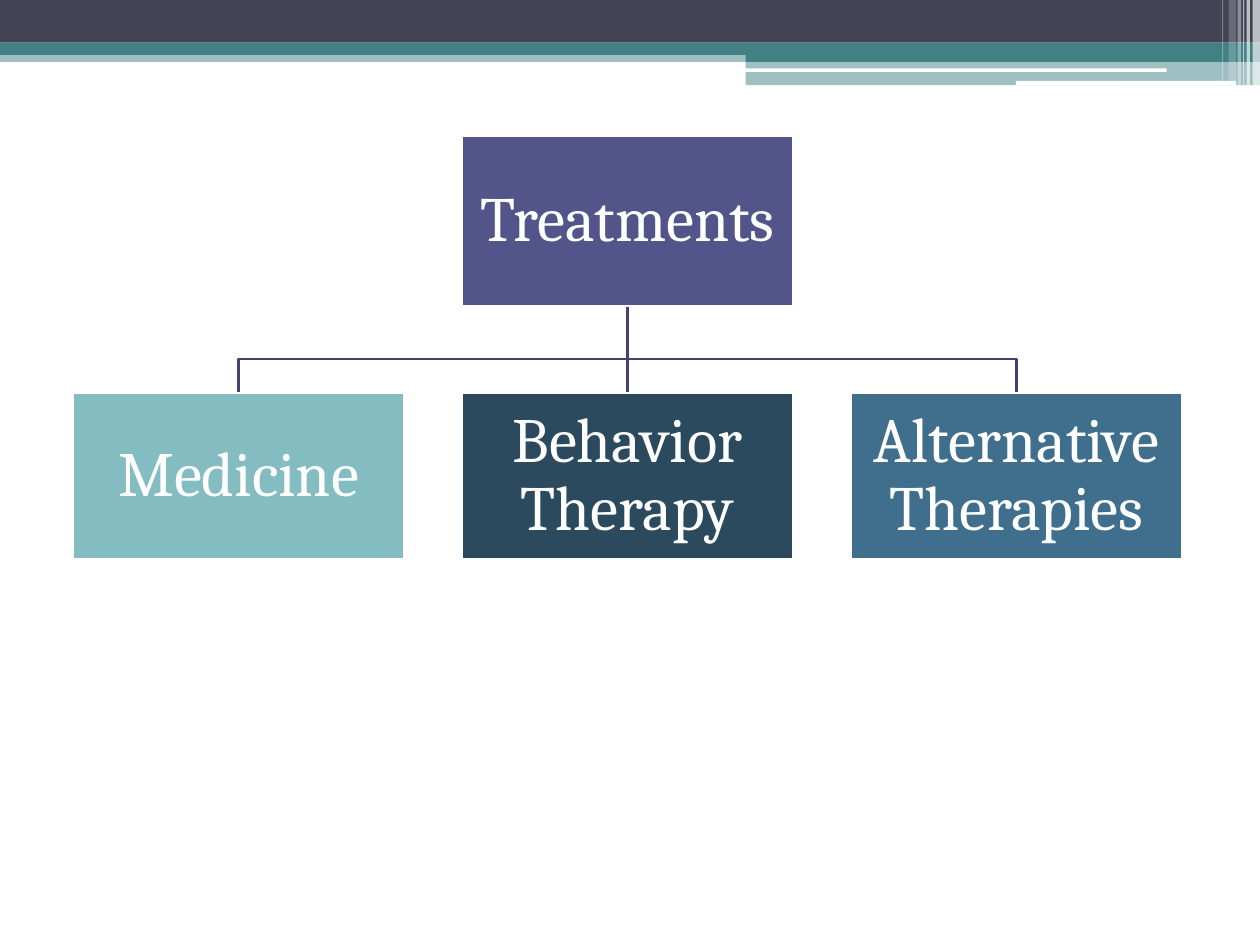
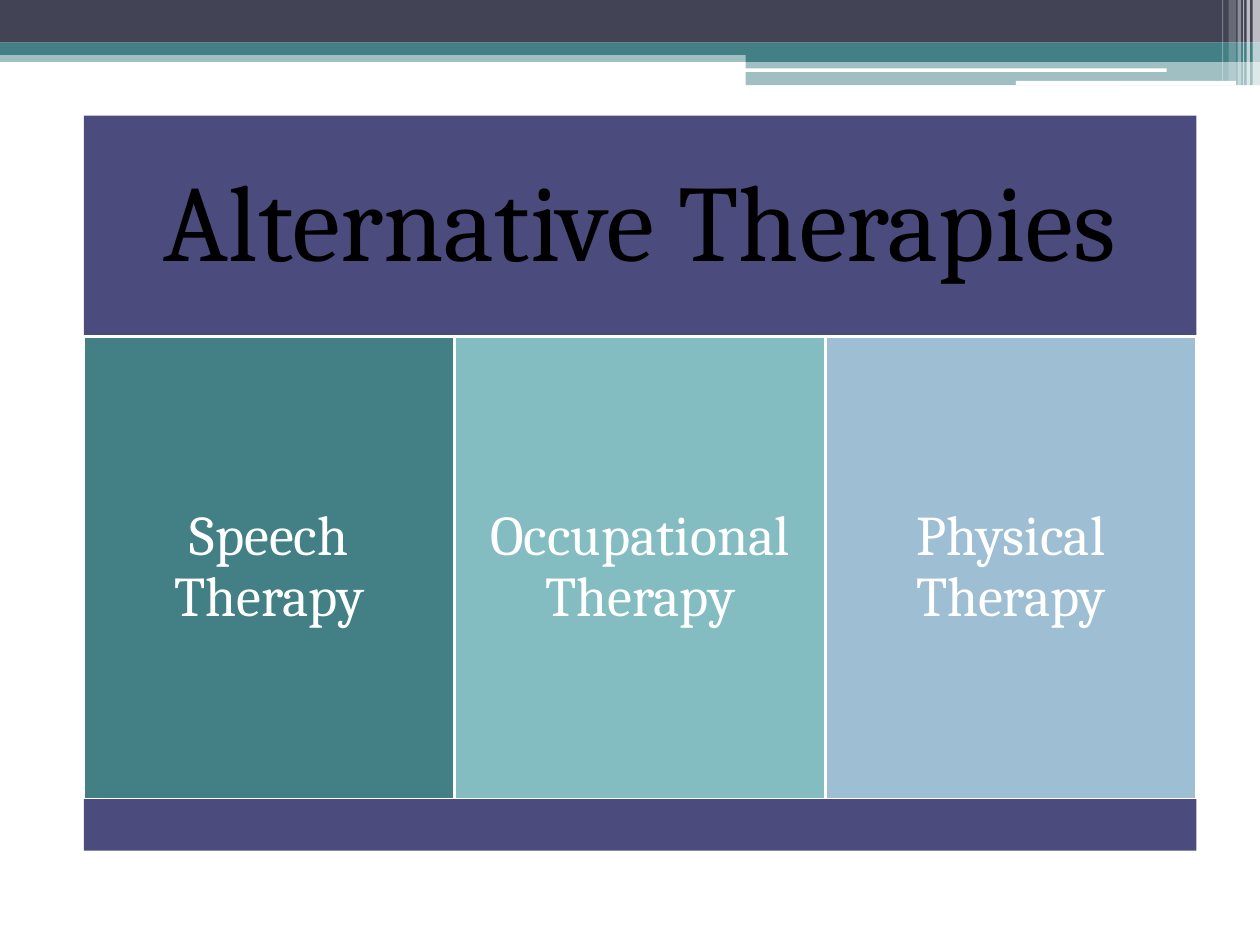
"""Build two slides on treatments and alternative therapies."""
from lxml.etree import SubElement
from pptx import Presentation
from pptx.dml.color import RGBColor
from pptx.enum.shapes import MSO_CONNECTOR, MSO_SHAPE
from pptx.enum.text import MSO_ANCHOR, MSO_AUTO_SIZE, PP_ALIGN
from pptx.oxml.ns import qn
from pptx.util import Cm, Pt

FONT = "Cambria"
WHITE, BLACK = "FFFFFF", "000000"
SLATE, TEAL, AQUA = "424456", "438086", "83BCC1"
LINK, BANNER = "42436F", "4B4C7D"
SLIDE_WIDTH, SLIDE_HEIGHT = 25.4, 19.05

ROOT = ("Treatments", "53548A")
TREATMENTS = [("Medicine", AQUA), ("Behavior Therapy", "2B4A5E"),
              ("Alternative Therapies", "406F8D")]
THERAPIES_TITLE = "Alternative Therapies"
THERAPIES = [("Speech Therapy", TEAL), ("Occupational Therapy", AQUA),
             ("Physical Therapy", "9DBED3")]

RIGHT_BAND = 15.03
RIGHT_WIDTH = SLIDE_WIDTH - RIGHT_BAND
BANDS = [
    (MSO_SHAPE.RECTANGLE, (0, 1.02, SLIDE_WIDTH, 0.23), TEAL, 50),
    (MSO_SHAPE.RECTANGLE, (0, 0, SLIDE_WIDTH, 0.86), SLATE, 100),
    (MSO_SHAPE.RECTANGLE, (0, 0.86, SLIDE_WIDTH, 0.25), TEAL, 100),
    (MSO_SHAPE.RECTANGLE, (RIGHT_BAND, 1, RIGHT_WIDTH, 0.25), TEAL, 100),
    (MSO_SHAPE.RECTANGLE, (RIGHT_BAND, 1.25, RIGHT_WIDTH, 0.47), TEAL, 50),
    (MSO_SHAPE.ROUNDED_RECTANGLE, (15.01, 1.38, 8.51, 0.07), WHITE, 100),
    (MSO_SHAPE.ROUNDED_RECTANGLE, (20.48, 1.63, 4.44, 0.09), WHITE, 100),
]
STRIPS = [(25.25, 0.15, 1.73, 65), (25.13, 0.07, 1.73, 65), (25.06, 0.02, 1.73, 60),
          (24.95, 0.07, 1.73, 40), (24.77, 0.15, 1.63, 20), (24.64, 0.02, 1.63, 30)]
BANDS += [(MSO_SHAPE.RECTANGLE, (left, 0, width, height), WHITE, opacity)
          for left, width, height, opacity in STRIPS]


def color(value):
    """Turn a hex string into a colour."""
    return RGBColor.from_string(value)


def paint(shape, fill, line=None):
    """Fill a shape and give it an outline or none."""
    shape.fill.solid()
    shape.fill.fore_color.rgb = color(fill)
    if line:
        shape.line.color.rgb = color(line)
        shape.line.width = Pt(1.5)
    else:
        shape.line.fill.background()


def add_block(slide, box, fill, line=None, kind=MSO_SHAPE.RECTANGLE):
    """Add a flat painted shape at a box given in centimetres."""
    shape = slide.shapes.add_shape(kind, *map(Cm, box))
    shape.shadow.inherit = False
    paint(shape, fill, line)
    return shape


def write(shape, text, size, inset, font_color=WHITE):
    """Put centred text in a shape."""
    frame = shape.text_frame
    frame.word_wrap = True
    frame.auto_size = MSO_AUTO_SIZE.NONE
    frame.vertical_anchor = MSO_ANCHOR.MIDDLE
    frame.margin_left = frame.margin_right = Cm(inset)
    frame.margin_top = frame.margin_bottom = Cm(inset)
    paragraph = frame.paragraphs[0]
    paragraph.alignment = PP_ALIGN.CENTER
    paragraph.line_spacing = 0.9
    run = paragraph.add_run()
    run.text = text
    run.font.name = FONT
    run.font.size = Pt(size)
    run.font.color.rgb = color(font_color)


def place_title(slide, box, fill, line=None):
    """Move the title to a box, paint it and bring it to the front."""
    title = slide.shapes.title
    title.left, title.top, title.width, title.height = map(Cm, box)
    paint(title, fill, line)
    slide.shapes.element.append(title.element)
    return title


def decorate_layout(layout, slide):
    """Draw the header bands and hand them over to the layout."""
    for number, (kind, box, fill, opacity) in enumerate(BANDS, 101):
        band = add_block(slide, box, fill, kind=kind)
        if opacity < 100:
            fill_color = band.element.spPr.find(f"{qn('a:solidFill')}/{qn('a:srgbClr')}")
            SubElement(fill_color, qn("a:alpha"), val=str(opacity * 1000))
        band.element.nvSpPr.cNvPr.set("id", str(number))
        layout.shapes.element.append(band.element)


def style_link(link):
    """Give a link its line."""
    link.line.color.rgb = color(LINK)
    link.line.width = Pt(1.5)


def add_elbow(slide, points):
    """Add an open bent line through the points."""
    start, *rest = [(Cm(x), Cm(y)) for x, y in points]
    builder = slide.shapes.build_freeform(*start)
    builder.add_line_segments(rest, close=False)
    elbow = builder.convert_to_shape()
    elbow.shadow.inherit = False
    elbow.fill.background()
    style_link(elbow)


def build_treatments(slide):
    """Draw the tree of treatments."""
    left, pitch, width = 1.47, 7.84, 6.68
    root_top, root_height = 2.74, 3.43
    child_top, child_height, bend = 7.92, 3.35, 7.24
    root_left = left + pitch
    root_bottom = root_top + root_height
    center = root_left + width / 2

    for x in (center + pitch, center - pitch):
        add_elbow(slide, [(center, root_bottom), (center, bend), (x, bend), (x, child_top)])
    trunk = slide.shapes.add_connector(MSO_CONNECTOR.STRAIGHT, Cm(center), Cm(root_bottom),
                                       Cm(center), Cm(child_top))
    SubElement(trunk.element.spPr, qn("a:effectLst"))
    style_link(trunk)

    text, fill = ROOT
    root = place_title(slide, (root_left, root_top, width, root_height), fill, WHITE)
    write(root, text, 36, 0.08)
    children = []
    for index, (text, fill) in enumerate(TREATMENTS):
        box = (left + index * pitch, child_top, width, child_height)
        children.append(add_block(slide, box, fill, WHITE))
        write(children[-1], text, 36, 0.08)
    trunk.begin_connect(root, 2)
    trunk.end_connect(children[1], 0)


def build_therapies(slide):
    """Draw the banner, the columns of therapies and the base."""
    left, width = 1.69, 22.43
    banner_top, banner_height, column_height, base_height = 2.33, 4.45, 9.33, 1.04
    column_top = banner_top + banner_height
    column_width = width / len(THERAPIES)

    banner = place_title(slide, (left, banner_top, width, banner_height), BANNER)
    write(banner, THERAPIES_TITLE, 62, 0.66, BLACK)
    for index, (text, fill) in enumerate(THERAPIES):
        box = (left + index * column_width, column_top, column_width, column_height)
        write(add_block(slide, box, fill, WHITE), text, 32, 0.33)
    add_block(slide, (left, column_top + column_height, width, base_height), BANNER)


def main():
    """Build and save the presentation."""
    presentation = Presentation()
    presentation.slide_width = Cm(SLIDE_WIDTH)
    presentation.slide_height = Cm(SLIDE_HEIGHT)
    layout = presentation.slide_layouts[5]
    treatments, therapies = [presentation.slides.add_slide(layout) for _ in range(2)]
    decorate_layout(layout, treatments)
    build_treatments(treatments)
    build_therapies(therapies)
    presentation.save("out.pptx")


if __name__ == "__main__":
    main()
